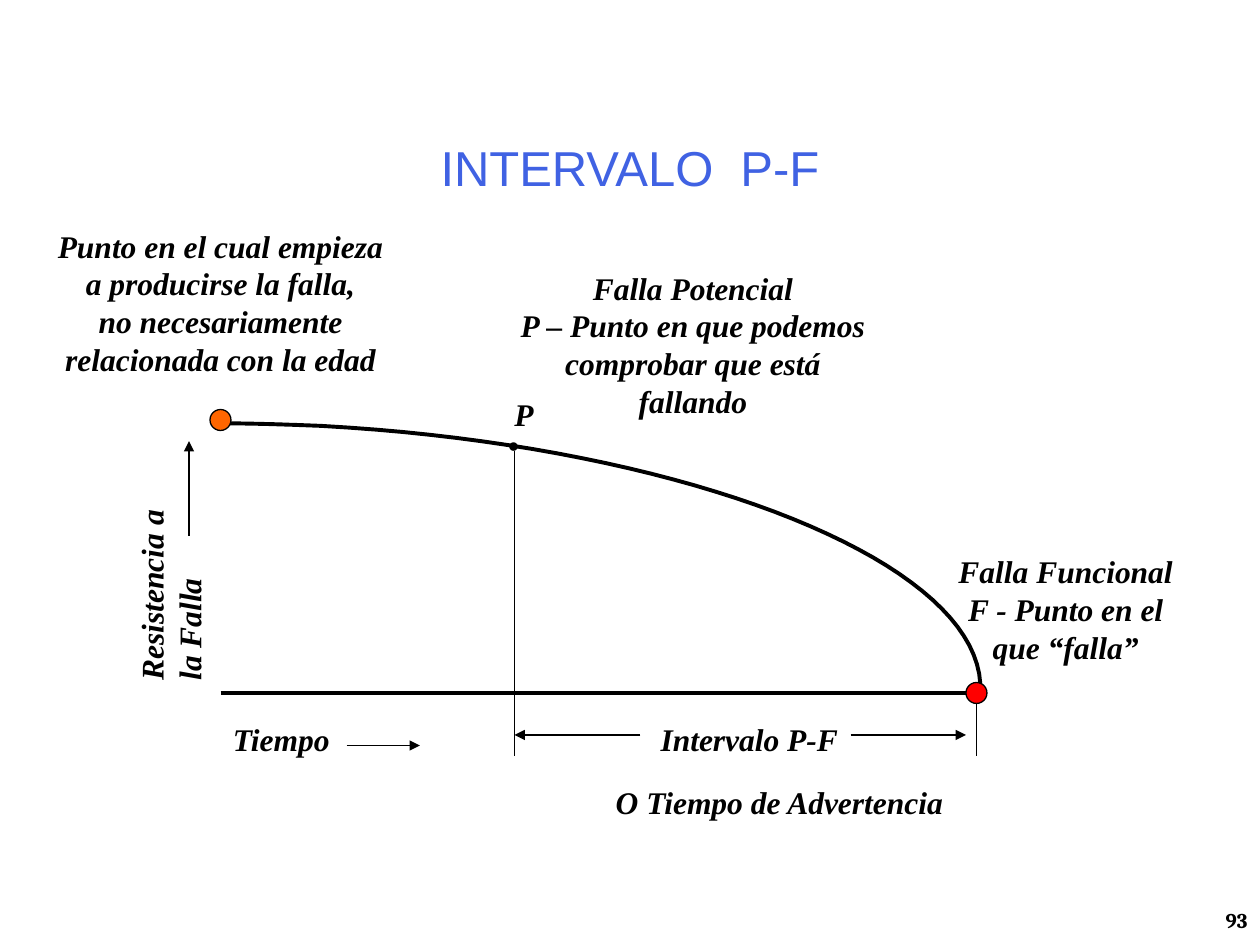
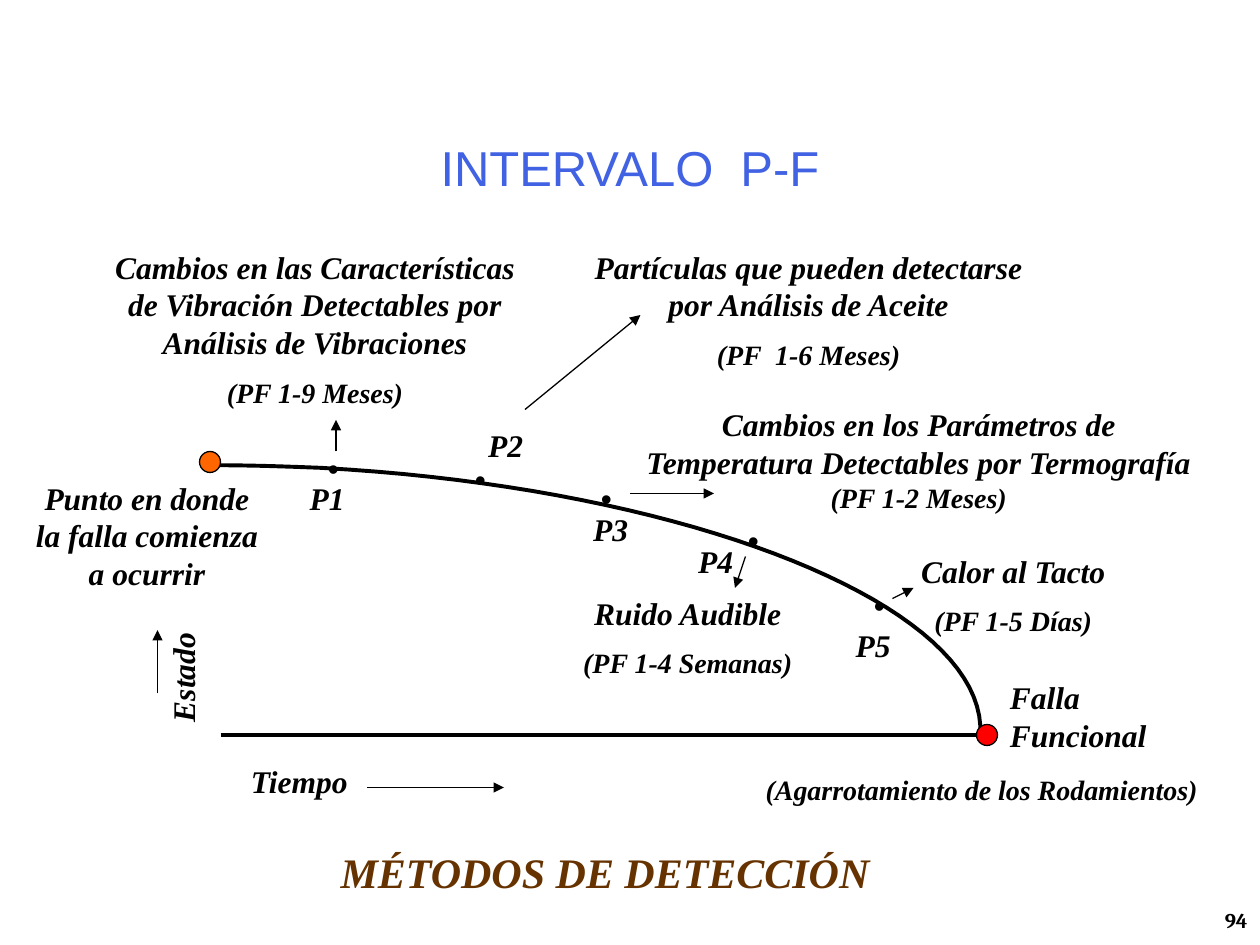
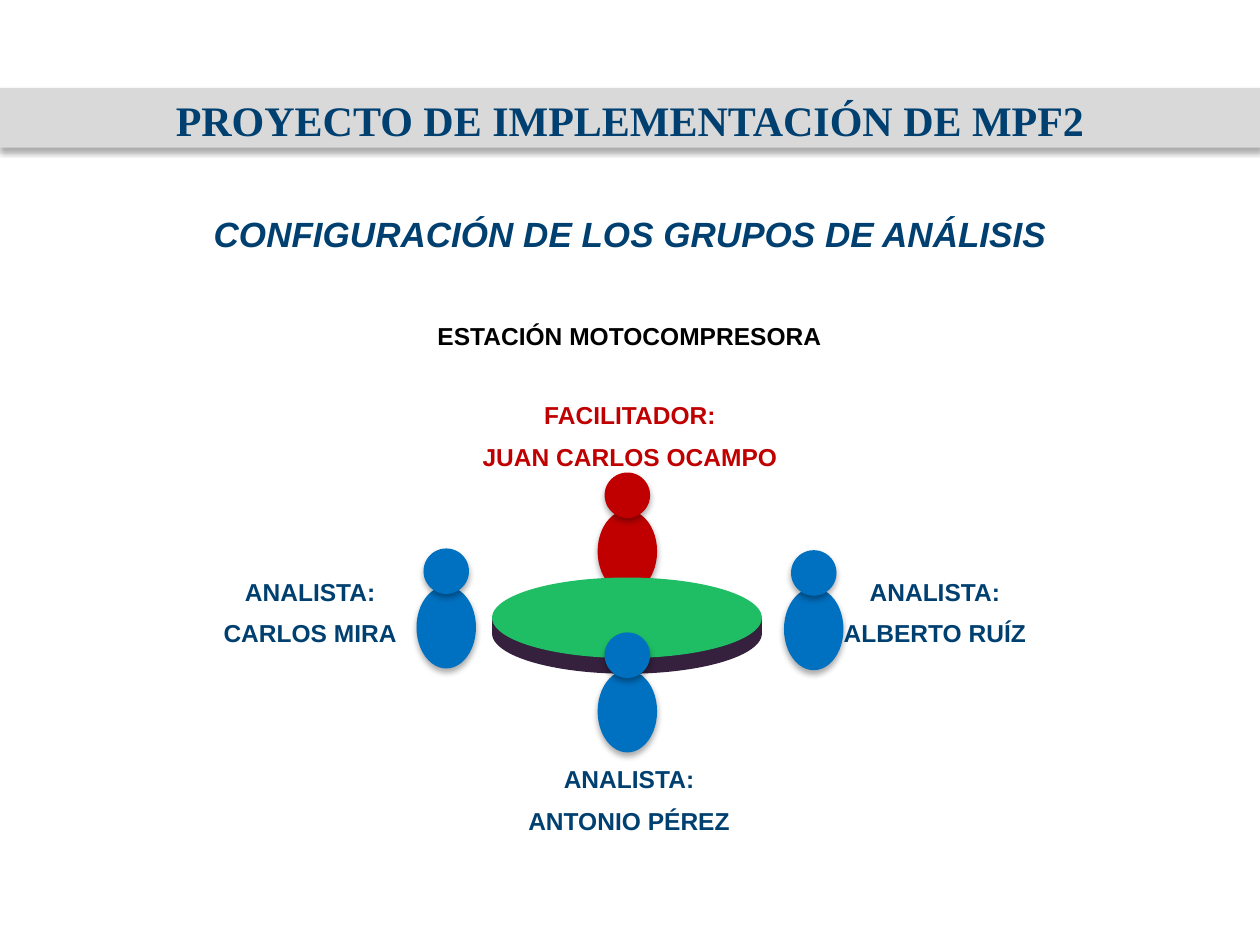
from lxml.etree import SubElement
from pptx import Presentation
from pptx.dml.color import RGBColor
from pptx.enum.shapes import MSO_CONNECTOR, MSO_SHAPE
from pptx.enum.text import MSO_ANCHOR, PP_ALIGN
from pptx.oxml.ns import qn
from pptx.util import Pt

BLACK = RGBColor(0x00, 0x00, 0x00)
TITLE_BLUE = RGBColor(0x40, 0x62, 0xE3)
NAVY = RGBColor(0x00, 0x40, 0x70)
RED = RGBColor(0xC0, 0x00, 0x00)
BLUE = RGBColor(0x00, 0x70, 0xC0)
BROWN = RGBColor(0x66, 0x33, 0x00)
START_ORANGE = RGBColor(0xFF, 0x66, 0x00)
FAILURE_RED = RGBColor(0xFF, 0x00, 0x00)
TABLE_GREEN = RGBColor(0x1F, 0xBE, 0x65)
TABLE_SIDE = RGBColor(0x35, 0x20, 0x3D)
BAND_GRAY = RGBColor(0xD9, 0xD9, 0xD9)
SERIF = "Times New Roman"
SANS = "Arial"
LEFT, CENTER, RIGHT = PP_ALIGN.LEFT, PP_ALIGN.CENTER, PP_ALIGN.RIGHT


def add_text(page, place, text, align=CENTER, size=18, font=SERIF, color=BLACK,
             bold=True, italic=True, anchor=MSO_ANCHOR.TOP, wrap=True, gap=0, later_size=None):
    box = page.shapes.add_textbox(*[Pt(length) for length in place])
    frame = box.text_frame
    frame.word_wrap = wrap
    frame.vertical_anchor = anchor
    frame.text = text
    for index, para in enumerate(frame.paragraphs):
        para.alignment = align
        if index:
            para.space_before = Pt(gap)
        for span in para.runs:
            span.font.name = font
            span.font.size = Pt(later_size if index and later_size else size)
            span.font.bold = bold
            span.font.italic = italic
            span.font.color.rgb = color
    return box


def add_line(page, start_x, start_y, end_x, end_y, width=0.75, arrow=True):
    line = page.shapes.add_connector(
        MSO_CONNECTOR.STRAIGHT, Pt(start_x), Pt(start_y), Pt(end_x), Pt(end_y))
    line.line.color.rgb = BLACK
    line.line.width = Pt(width)
    if arrow:
        SubElement(line.line._get_or_add_ln(), qn("a:tailEnd"), type="triangle")
    SubElement(line._element.spPr, qn("a:effectLst"))


deck = Presentation()
deck.slide_width, deck.slide_height = Pt(720), Pt(540)
blank = deck.slide_layouts[6]

curve_parts = [
    [(123.8, 241.9), (143.3, 241.9), (163.4, 242.6), (183.6, 243.4)],
    [(183.6, 243.4), (395.3, 254.9), (564.5, 322.6), (560.2, 396)],
]
STEPS = 40
curve_points = []
for part in curve_parts:
    for step in range(STEPS + 1):
        t = step / STEPS
        weights = [(1 - t) ** 3, 3 * t * (1 - t) ** 2, 3 * t ** 2 * (1 - t), t ** 3]
        curve_points.append([sum(w * point[axis] for w, point in zip(weights, part)) for axis in (0, 1)])

interval_pages = []
for number, drop, start_dot, failure_dot, marks in [
    ("93", 0, (120, 234), (552, 390), [(282, 239.5)]),
    ("94", 24, (114, 258), (558, 414),
     [(263, 259), (179, 253), (335, 270), (419, 294), (491, 331)]),
]:
    page = deck.slides.add_slide(blank)
    interval_pages.append(page)
    add_text(page, (36, 50.4, 648, 90), "INTERVALO  P-F", size=28, font=SANS, color=TITLE_BLUE,
             bold=False, italic=False, anchor=MSO_ANCHOR.MIDDLE)
    add_text(page, (669.6, 511.2, 50.4, 28.8), number, RIGHT, size=12, font="Cambria",
             italic=False, anchor=MSO_ANCHOR.MIDDLE)
    add_line(page, 126, 396 + drop, 564, 396 + drop, width=2.25, arrow=False)
    points = [(Pt(x), Pt(y + drop)) for x, y in curve_points]
    builder = page.shapes.build_freeform(*points[0])
    builder.add_line_segments(points[1:], close=False)
    curve = builder.convert_to_shape()
    curve.shadow.inherit = False
    curve.fill.background()
    curve.line.color.rgb = BLACK
    curve.line.width = Pt(2.25)
    for left, top in marks:
        add_text(page, (left, top, 23, 29), "•", font=SANS, bold=False, italic=False,
                 anchor=MSO_ANCHOR.MIDDLE, wrap=False)
    for (left, top), color in [(start_dot, START_ORANGE), (failure_dot, FAILURE_RED)]:
        dot = page.shapes.add_shape(MSO_SHAPE.OVAL, Pt(left), Pt(top), Pt(12), Pt(12))
        dot.shadow.inherit = False
        dot.fill.solid()
        dot.fill.fore_color.rgb = color
        dot.line.color.rgb = BLACK
        dot.line.width = Pt(0.75)

interval_page, methods_page = interval_pages

for place, text, align in [
    ((534, 312, 150, 72), "Falla Funcional F - Punto en el que “falla”", CENTER),
    ((264, 222, 48, 29), "P", RIGHT),
    ((126, 408, 114, 29), "Tiempo", LEFT),
    ((24, 126, 204, 94), "Punto en el cual empieza a producirse la falla,\n"
                         "no necesariamente relacionada con la edad", CENTER),
    ((288, 150, 216, 94), "Falla Potencial\nP – Punto en que podemos\n"
                          "comprobar que está fallando", CENTER),
    ((360, 408, 126, 29), "Intervalo P-F", RIGHT),
    ((324, 444, 222, 29), "O Tiempo de Advertencia", RIGHT),
]:
    add_text(interval_page, place, text, align)
resistance = add_text(interval_page, (40, 314, 114, 50), "Resistencia a la Falla", LEFT)
resistance.rotation = 270
for ends in [(198, 426, 240, 426), (108, 306, 108, 252), (366, 420, 294, 420), (486, 420, 552, 420)]:
    add_line(interval_page, *ends)
for ends in [(294, 258, 294, 432), (558, 402, 558, 432)]:
    add_line(interval_page, *ends, arrow=False)

for left, top, label in [(156, 270, "P1"), (258, 240, "P2"), (318, 288, "P3"),
                         (378, 306, "P4"), (468, 354, "P5")]:
    add_text(methods_page, (left, top, 48, 29), label, RIGHT)
for place, text in [
    ((54, 138, 252, 101), "Cambios en las Características de Vibración Detectables por "
                          "Análisis de Vibraciones\n(PF 1-9 Meses)"),
    ((330, 138, 264, 79), "Partículas que pueden detectarse por Análisis de Aceite\n(PF  1-6 Meses)"),
    ((318, 336, 150, 58), "Ruido Audible\n(PF 1-4 Semanas)"),
    ((504, 312, 150, 58), "Calor al Tacto\n(PF 1-5 Días)"),
    ((12, 270, 144, 72), "Punto en donde la falla comienza a ocurrir"),
    ((78, 432, 186, 29), "Tiempo"),
]:
    add_text(methods_page, place, text, gap=8, later_size=16)
add_text(methods_page, (360, 228, 330, 70),
         "Cambios en los Parámetros de Temperatura Detectables por Termografía\n(PF 1-2 Meses)",
         later_size=16)
add_text(methods_page, (570, 384, 108, 50), "Falla Funcional", LEFT)
add_text(methods_page, (426, 438, 270, 27), "(Agarrotamiento de los Rodamientos)", size=16)
add_text(methods_page, (150, 480, 354, 36), "MÉTODOS DE DETECCIÓN", RIGHT, size=24, color=BROWN)
state = add_text(methods_page, (68.4, 376, 72, 29), "Estado", RIGHT)
state.rotation = 270
for ends in [(210, 450, 288, 450), (90, 396, 90, 360), (192, 258, 192, 240), (300, 234, 366, 180),
             (360, 282, 408, 282), (510, 342, 522, 336), (426, 318, 420, 336)]:
    add_line(methods_page, *ends)

group_page = deck.slides.add_slide(blank)
add_text(group_page, (11.5, 118, 697, 32), "CONFIGURACIÓN DE LOS GRUPOS DE ANÁLISIS",
         size=20, font=SANS, color=NAVY)
add_text(group_page, (242, 180, 235.5, 24.5), "ESTACIÓN MOTOCOMPRESORA",
         size=14, font=SANS, italic=False, wrap=False)

OVAL, RECTANGLE = MSO_SHAPE.OVAL, MSO_SHAPE.RECTANGLE
people = [
    ("FACILITADOR:\nJUAN CARLOS OCAMPO", (268, 225, 184, 50), (341.5, 291.6), RED, RED),
    ("ANALISTA:\nANTONIO PÉREZ", (294.5, 433, 130, 50), (341.5, 383), BLUE, NAVY),
    ("ANALISTA:\nCARLOS MIRA", (120, 326, 114.5, 50), (238, 335), BLUE, NAVY),
    ("ANALISTA:\nALBERTO RUÍZ", (474.5, 326, 119.5, 50), (448, 336), BLUE, NAVY),
]
pieces = [(RECTANGLE, (0, 50.4, 720, 34), BAND_GRAY, True)]
for index, (text, place, (left, top), color, text_color) in enumerate(people):
    pieces.append((OVAL, (left, top, 34, 47), color, True))
    pieces.append((OVAL, (left + 4, top - 21.6, 26, 26), color, True))
    if index == 0:
        pieces.append((OVAL, (281.2, 339, 154.2, 46), TABLE_SIDE, False))
        pieces.append((RECTANGLE, (281.2, 353, 154.2, 9), TABLE_SIDE, False))
        pieces.append((OVAL, (281.2, 330, 154.2, 46), TABLE_GREEN, False))
for kind, place, color, shaded in pieces:
    piece = group_page.shapes.add_shape(kind, *[Pt(length) for length in place])
    piece.shadow.inherit = False
    piece.fill.solid()
    piece.fill.fore_color.rgb = color
    piece.line.fill.background()
    if shaded:
        effects = piece._element.spPr.find(qn("a:effectLst"))
        shadow = SubElement(effects, qn("a:outerShdw"), blurRad=str(Pt(3.5)), dist=str(Pt(2.2)),
                            dir="5400000", rotWithShape="0")
        shade = SubElement(shadow, qn("a:srgbClr"), val=str(BLACK))
        SubElement(shade, qn("a:alpha"), val="32000")
for text, place, _, _, text_color in people:
    add_text(group_page, place, text, size=14, font=SANS, color=text_color,
             italic=False, wrap=False, gap=7)
add_text(group_page, (0, 50.4, 720, 37), "PROYECTO DE IMPLEMENTACIÓN DE MPF2",
         size=24, color=NAVY, italic=False)

deck.save("out.pptx")
